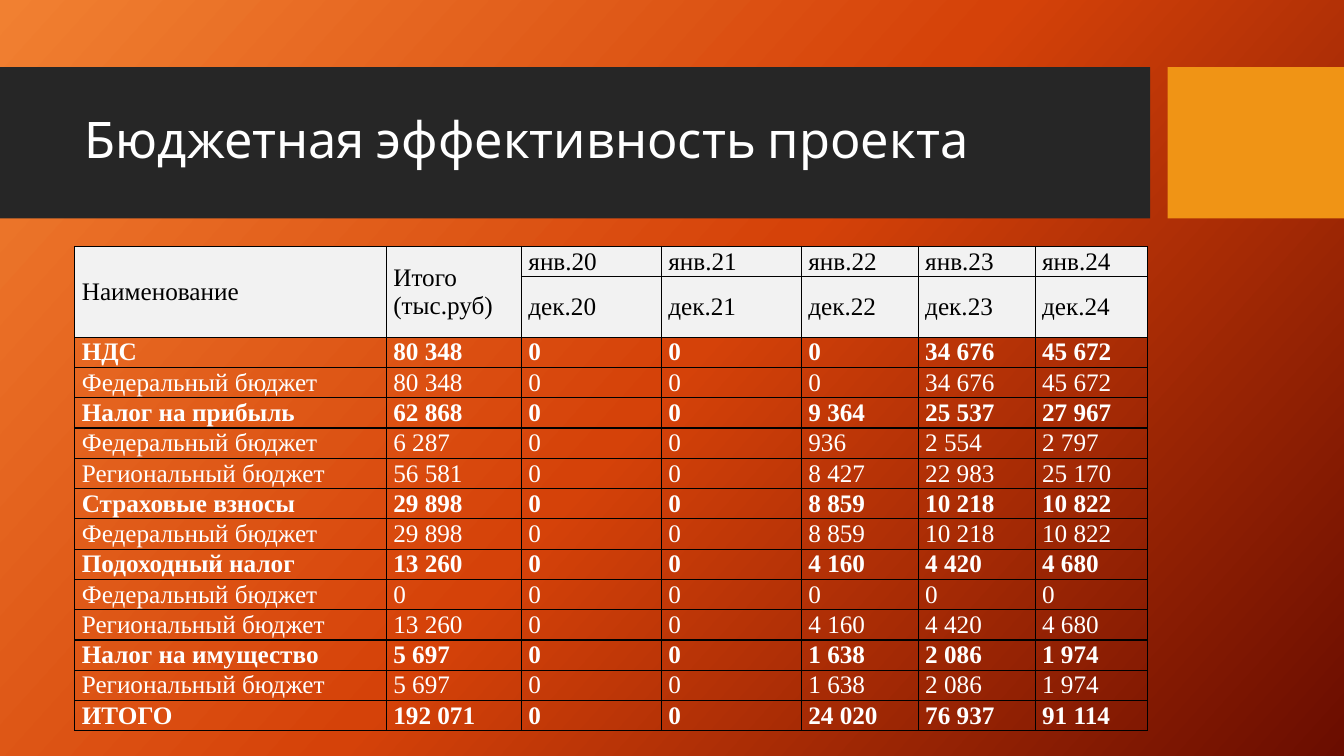
from copy import deepcopy

from lxml import etree
from pptx import Presentation
from pptx.dml.color import RGBColor
from pptx.enum import shapes, text
from pptx.oxml import ns
from pptx.util import Pt

HUES = {"sun": "F18031", "fire": "D54209", "wine": "6A0D00", "band": "262626",
        "gold": "F09415", "head": "F2F2F2", "ink": "000000", "white": "FFFFFF"}
COLS = [222.5, 96.5, 100, 100, 83.5, 83.5, 80]
ROW = 20.95
YEARS = range(20, 25)
HEAD = [["Наименование", "Итого (тыс.руб)"] + [f"янв.{y}" for y in YEARS],
        ["", ""] + [f"дек.{y}" for y in YEARS]]
FED, REG = "Федеральный бюджет", "Региональный бюджет"
BODY = [
    ["НДС", "80 348", "0", "0", "0", "34 676", "45 672"],
    [FED, "80 348", "0", "0", "0", "34 676", "45 672"],
    ["Налог на прибыль", "62 868", "0", "0", "9 364", "25 537", "27 967"],
    [FED, "6 287", "0", "0", "936", "2 554", "2 797"],
    [REG, "56 581", "0", "0", "8 427", "22 983", "25 170"],
    ["Страховые взносы", "29 898", "0", "0", "8 859", "10 218", "10 822"],
    [FED, "29 898", "0", "0", "8 859", "10 218", "10 822"],
    ["Подоходный налог", "13 260", "0", "0", "4 160", "4 420", "4 680"],
    [FED, "0", "0", "0", "0", "0", "0"],
    [REG, "13 260", "0", "0", "4 160", "4 420", "4 680"],
    ["Налог на имущество", "5 697", "0", "0", "1 638", "2 086", "1 974"],
    [REG, "5 697", "0", "0", "1 638", "2 086", "1 974"],
    ["ИТОГО", "192 071", "0", "0", "24 020", "76 937", "91 114"],
]


def hue(name):
    return RGBColor.from_string(HUES[name])


def style(font, face, size, tint, bold=False):
    font.name, font.size, font.bold = face, Pt(size), bold
    font.color.rgb = hue(tint)


def paint_back(slide):
    fill = slide.background.fill
    fill.gradient()
    fill.gradient_angle = 318
    last = fill._fill._gradFill.gsLst[-1]
    last.addprevious(deepcopy(last))
    for stop, spot, name in zip(fill.gradient_stops, (0, 0.5, 1), ("sun", "fire", "wine")):
        stop.position = spot
        stop.color.rgb = hue(name)


def add_block(slide, left, top, width, height, name):
    block = slide.shapes.add_shape(shapes.MSO_SHAPE.RECTANGLE,
                                   Pt(left), Pt(top), Pt(width), Pt(height))
    block.shadow.inherit = False
    block.fill.solid()
    block.fill.fore_color.rgb = hue(name)
    block.line.fill.background()


def add_title(slide, left, top, width, height):
    """Dark band with the title, then a gold block up to the right edge."""
    add_block(slide, left, top, width - 138.5, height, "band")
    add_block(slide, left + width - 126, top, 126, height, "gold")
    box = slide.shapes.add_textbox(Pt(left + 53.5), Pt(top + 11), Pt(757), Pt(85))
    frame = box.text_frame
    frame.word_wrap = True
    frame.vertical_anchor = text.MSO_ANCHOR.MIDDLE
    frame.text = "Бюджетная эффективность проекта"
    para = frame.paragraphs[0]
    para.line_spacing = 0.9
    style(para.runs[0].font, "Karla", 36, "white")


def add_edges(cell):
    props = cell._tc.get_or_add_tcPr()
    for spot, side in enumerate(("lnL", "lnR", "lnT", "lnB")):
        edge = etree.Element(ns.qn(f"a:{side}"), w=str(Pt(1)))
        fill = etree.SubElement(edge, ns.qn("a:solidFill"))
        etree.SubElement(fill, ns.qn("a:srgbClr"), val=HUES["ink"])
        props.insert(spot, edge)


def fill_cell(cell, words, head, bold):
    cell.margin_left = cell.margin_right = Pt(5)
    cell.margin_top = cell.margin_bottom = 0
    cell.vertical_anchor = text.MSO_ANCHOR.MIDDLE
    if head:
        cell.fill.solid()
        cell.fill.fore_color.rgb = hue("head")
    else:
        cell.fill.background()
    add_edges(cell)
    cell.text_frame.text = words
    para = cell.text_frame.paragraphs[0]
    para.alignment = text.PP_ALIGN.JUSTIFY
    style(para.font, "Times New Roman", 18, "ink" if head else "white", bold)
    for run in para.runs:
        style(run.font, "Times New Roman", 18, "ink" if head else "white", bold)


def add_budget(slide, left, top):
    rows = HEAD + BODY
    table = slide.shapes.add_table(len(rows), len(COLS), Pt(left), Pt(top),
                                   Pt(sum(COLS)), Pt(ROW * len(rows))).table
    table.first_row = table.horz_banding = False
    for col, width in zip(table.columns, COLS):
        col.width = Pt(width)
    for r, row in enumerate(rows):
        table.rows[r].height = Pt(ROW)
        head = r < len(HEAD)
        bold = not head and row[0] not in (FED, REG)
        for c, words in enumerate(row):
            fill_cell(table.cell(r, c), words, head, bold)
    for c in (0, 1):
        table.cell(0, c).merge(table.cell(1, c))


def main():
    deck = Presentation()
    deck.slide_width, deck.slide_height = Pt(960), Pt(540)
    slide = deck.slides.add_slide(deck.slide_layouts[6])
    paint_back(slide)
    add_title(slide, 0, 48, 960, 108)
    add_budget(slide, 53.5, 176)
    deck.save("out.pptx")


if __name__ == "__main__":
    main()
